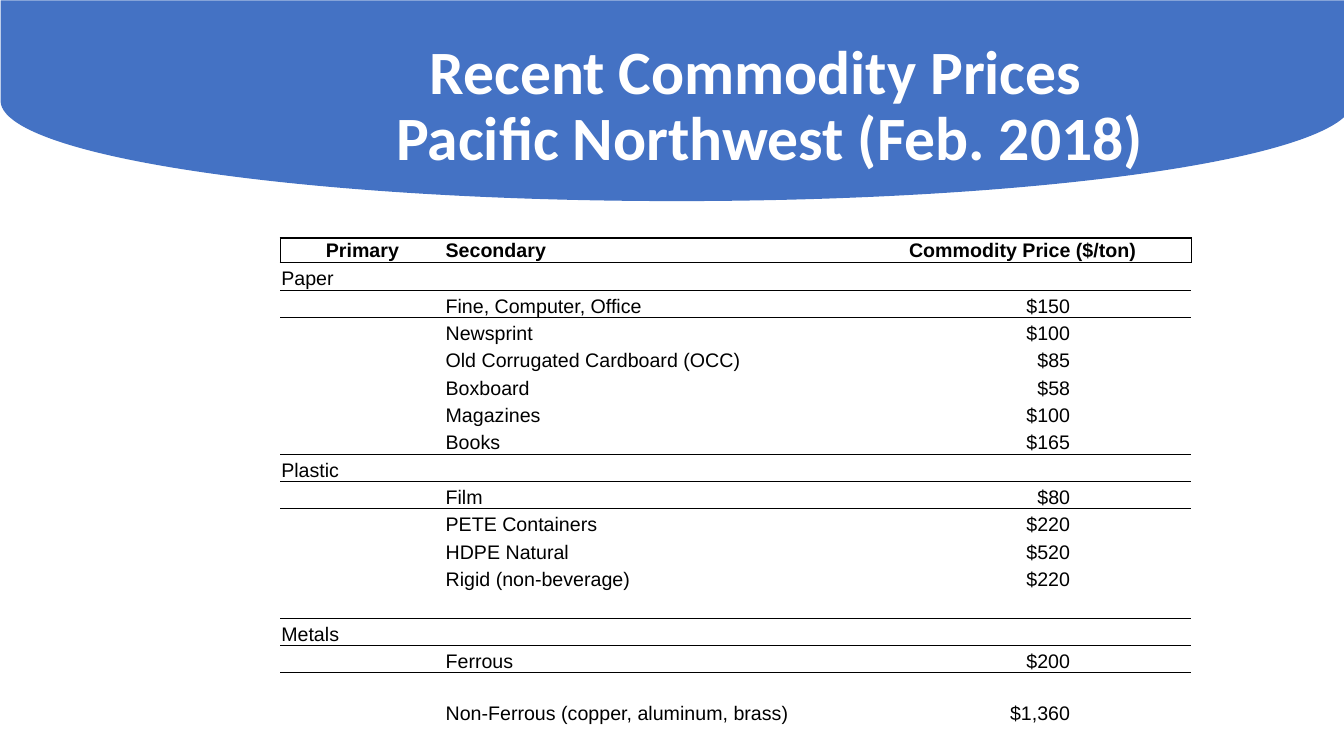
from dataclasses import dataclass

from lxml.etree import SubElement
from pptx import Presentation
from pptx.dml.color import RGBColor as RGB
from pptx.enum.shapes import MSO_SHAPE as SHAPE
from pptx.enum.text import MSO_ANCHOR as ANCHOR, PP_ALIGN as ALIGN
from pptx.oxml.ns import qn
from pptx.util import Pt


@dataclass(frozen=True)
class Theme:
    blue: RGB = RGB(0x44, 0x72, 0xC4)
    white: RGB = RGB(255, 255, 255)
    black: RGB = RGB(0, 0, 0)
    head: Pt = Pt(44)
    body: Pt = Pt(14)
    thick: Pt = Pt(1)
    thin: Pt = Pt(0.5)


THEME = Theme()
PLAIN = "{2D5ABB26-0587-4C30-8999-92F81FD0307C}"
WIDTHS = (117.4, 292.3, 159.1, 82.1)
HEAD_ROW, ROW, LAST_ROW = 16.8, 19.55, 37.4
TITLE = (("Recent Commodity Prices", 20), ("Pacific Northwest (Feb. 2018)", 0))
ROWS = (
    ("Primary", "Secondary", "Commodity Price ($/ton)"),
    ("Paper", "", ""),
    ("", "Fine, Computer, Office", "$150"),
    ("", "Newsprint", "$100"),
    ("", "Old Corrugated Cardboard (OCC)", "$85"),
    ("", "Boxboard", "$58"),
    ("", "Magazines", "$100"),
    ("", "Books", "$165"),
    ("Plastic", "", ""),
    ("", "Film", "$80"),
    ("", "PETE Containers", "$220"),
    ("", "HDPE Natural", "$520"),
    ("", "Rigid (non-beverage)", "$220"),
    ("", "", ""),
    ("Metals", "", ""),
    ("", "Ferrous", "$200"),
    ("", "Non-Ferrous (copper, aluminum, brass)", "$1,360"),
)


def apply(item, values):
    for name, value in values.items():
        setattr(item, name, value)


def write(para, text, size, face, color, bold):
    run = para.add_run()
    run.text = text
    apply(run.font, dict(size=size, name=face, bold=bold))
    run.font.color.rgb = color


def add_band(slide):
    band = slide.shapes.add_shape(SHAPE.FLOWCHART_DELAY, Pt(411.84), Pt(-411.1),
                                  Pt(143.3), Pt(966.2))
    band.rotation = 90
    band.shadow.inherit = False
    band.fill.solid()
    band.fill.fore_color.rgb = THEME.blue
    band.line.fill.background()


def add_title(slide):
    frame = slide.shapes.add_textbox(Pt(233.3), Pt(24.5), Pt(633.6), Pt(104.4)).text_frame
    apply(frame, dict(word_wrap=True, vertical_anchor=ANCHOR.MIDDLE))
    for i, (text, inset) in enumerate(TITLE):
        para = frame.add_paragraph() if i else frame.paragraphs[0]
        apply(para, dict(alignment=ALIGN.CENTER, line_spacing=0.9))
        para._p.get_or_add_pPr().set("marR", str(Pt(inset)))
        write(para, text, THEME.head, "Calibri", THEME.white, True)


def add_edge(cell, side, width):
    props = cell._tc.get_or_add_tcPr()
    line = SubElement(props, qn(f"a:ln{side}"), w=str(width))
    fill = SubElement(line, qn("a:solidFill"))
    SubElement(fill, qn("a:srgbClr"), val=str(THEME.black))


def get_edges(row, col):
    if row == 0:
        ends = {0: "L", 2: "R", 3: "R"}
        return {side: THEME.thick for side in ends.get(col, "") + "TB"}
    edges = {}
    if row == 1 or ROWS[row][0] or ROWS[row - 1][0]:
        edges["T"] = THEME.thick if row == 1 else THEME.thin
    if ROWS[row][0] or row + 1 < len(ROWS) and ROWS[row + 1][0]:
        edges["B"] = THEME.thin
    return edges


def fill_cell(cell, text, row, col):
    price = row > 0 and col == 2
    apply(cell, dict(margin_left=Pt(0.72), margin_top=Pt(0.72), margin_bottom=0,
                     margin_right=Pt(4.6 if price else 0.72),
                     vertical_anchor=ANCHOR.BOTTOM if row else ANCHOR.MIDDLE))
    for side, width in get_edges(row, col).items():
        add_edge(cell, side, width)
    cell.fill.background()
    para = cell.text_frame.paragraphs[0]
    if price:
        para.alignment = ALIGN.RIGHT
    elif row == 0 and col != 1:
        para.alignment = ALIGN.CENTER
    if text:
        write(para, text, THEME.body, "Arial", THEME.black, row == 0)
    else:
        SubElement(para._p, qn("a:endParaRPr"), sz=str(int(THEME.body.pt * 100)))


def add_prices(slide):
    heights = [HEAD_ROW] + [ROW] * (len(ROWS) - 2) + [LAST_ROW]
    table = slide.shapes.add_table(len(ROWS), len(WIDTHS), Pt(200.2), Pt(170),
                                   Pt(sum(WIDTHS)), Pt(sum(heights))).table
    apply(table, dict(first_row=False, horz_banding=False))
    table._tbl.tblPr.find(qn("a:tableStyleId")).text = PLAIN
    for col, width in zip(table.columns, WIDTHS):
        col.width = Pt(width)
    for row, height in zip(table.rows, heights):
        row.height = Pt(height)
    table.cell(0, 2).merge(table.cell(0, 3))
    for r, texts in enumerate(ROWS):
        for c, text in enumerate(texts + ("",)):
            fill_cell(table.cell(r, c), text, r, c)


def main():
    deck = Presentation()
    apply(deck, dict(slide_width=Pt(960), slide_height=Pt(540)))
    slide = deck.slides.add_slide(deck.slide_layouts[6])
    add_band(slide)
    add_title(slide)
    add_prices(slide)
    deck.save("out.pptx")


if __name__ == "__main__":
    main()
